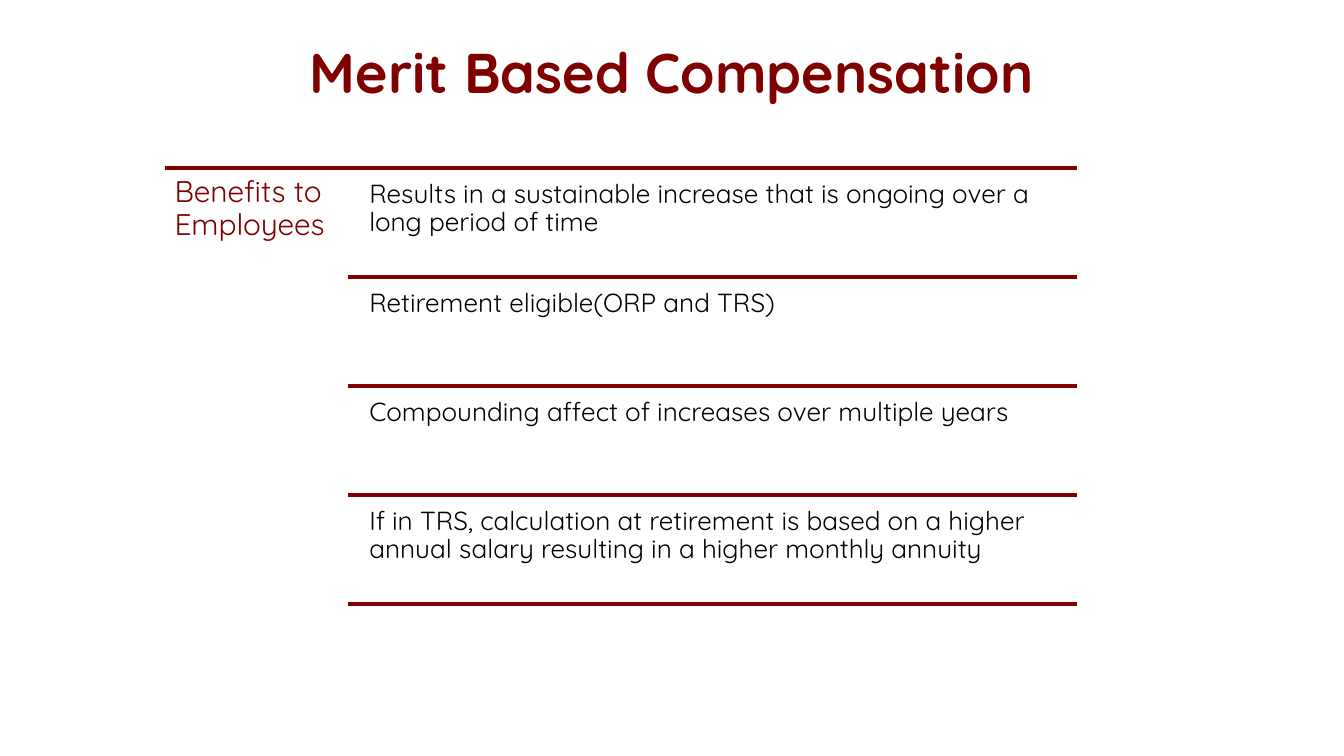
from pptx import Presentation
from pptx.dml.color import RGBColor
from pptx.enum import shapes, text
from pptx.oxml.ns import qn
from pptx.util import Cm, Pt
from lxml import etree

MAROON = RGBColor(0x80, 0x00, 0x00)
BLACK = RGBColor(0x00, 0x00, 0x00)
FONT = "Quicksand"

# Layout in centimetres
LEFT, COLUMN, TEXT_LEFT, RIGHT = 3.12, 6.58, 6.83, 20.35
TOP, PITCH = 3.17, 2.06
GAP, ROW_HEIGHT = 0.1, 1.96

BENEFITS = [
    "Results in a sustainable increase that is ongoing over a long period of time",
    "Retirement eligible(ORP and TRS)",
    "Compounding affect of increases over multiple years",
    "If in TRS, calculation at retirement is based on a higher annual salary "
    "resulting in a higher monthly annuity",
]


def add_text(slide, content, left, top, width, height, *, size, color=BLACK,
             bold=False, align=text.PP_ALIGN.LEFT, inset=0.15, spacing=0.9):
    sp = slide.shapes.add_textbox(Cm(left), Cm(top), Cm(width), Cm(height))
    tf = sp.text_frame
    tf.word_wrap = True
    tf.vertical_anchor = text.MSO_ANCHOR.TOP
    tf.margin_left = tf.margin_right = Cm(inset)
    tf.margin_top = tf.margin_bottom = Cm(inset)
    p = tf.paragraphs[0]
    p.alignment = align
    p.line_spacing = spacing
    r = p.add_run()
    r.text = content
    r.font.name = FONT
    r.font.size = Pt(size)
    r.font.bold = bold
    r.font.color.rgb = color
    return sp


def add_rule(slide, left, y):
    line = slide.shapes.add_connector(
        shapes.MSO_CONNECTOR.STRAIGHT, Cm(left), Cm(y), Cm(RIGHT), Cm(y))
    line.line.color.rgb = MAROON
    line.line.width = Pt(2)
    etree.SubElement(line._element.spPr, qn("a:effectLst"))
    return line


def main():
    prs = Presentation()
    prs.slide_width, prs.slide_height = Cm(25.4), Cm(14.29)
    s = prs.slides.add_slide(prs.slide_layouts[6])

    # Title
    add_text(s, "Merit Based Compensation", 1.27, 0.58, 22.86, 2.39, size=30,
             color=MAROON, bold=True, align=text.PP_ALIGN.CENTER,
             inset=0.13, spacing=1.0)

    # Heading column under the full-width rule
    add_rule(s, LEFT, TOP)
    add_text(s, "Benefits to Employees", LEFT, TOP, 3.43, 8.33, size=16,
             color=MAROON, inset=0.18)

    # Benefit rows, each closed by a rule
    for i, benefit in enumerate(BENEFITS):
        y = TOP + i * PITCH
        add_text(s, benefit, TEXT_LEFT, y + GAP, RIGHT - TEXT_LEFT, ROW_HEIGHT,
                 size=14)
        add_rule(s, COLUMN, y + PITCH)

    prs.save("out.pptx")


if __name__ == "__main__":
    main()
